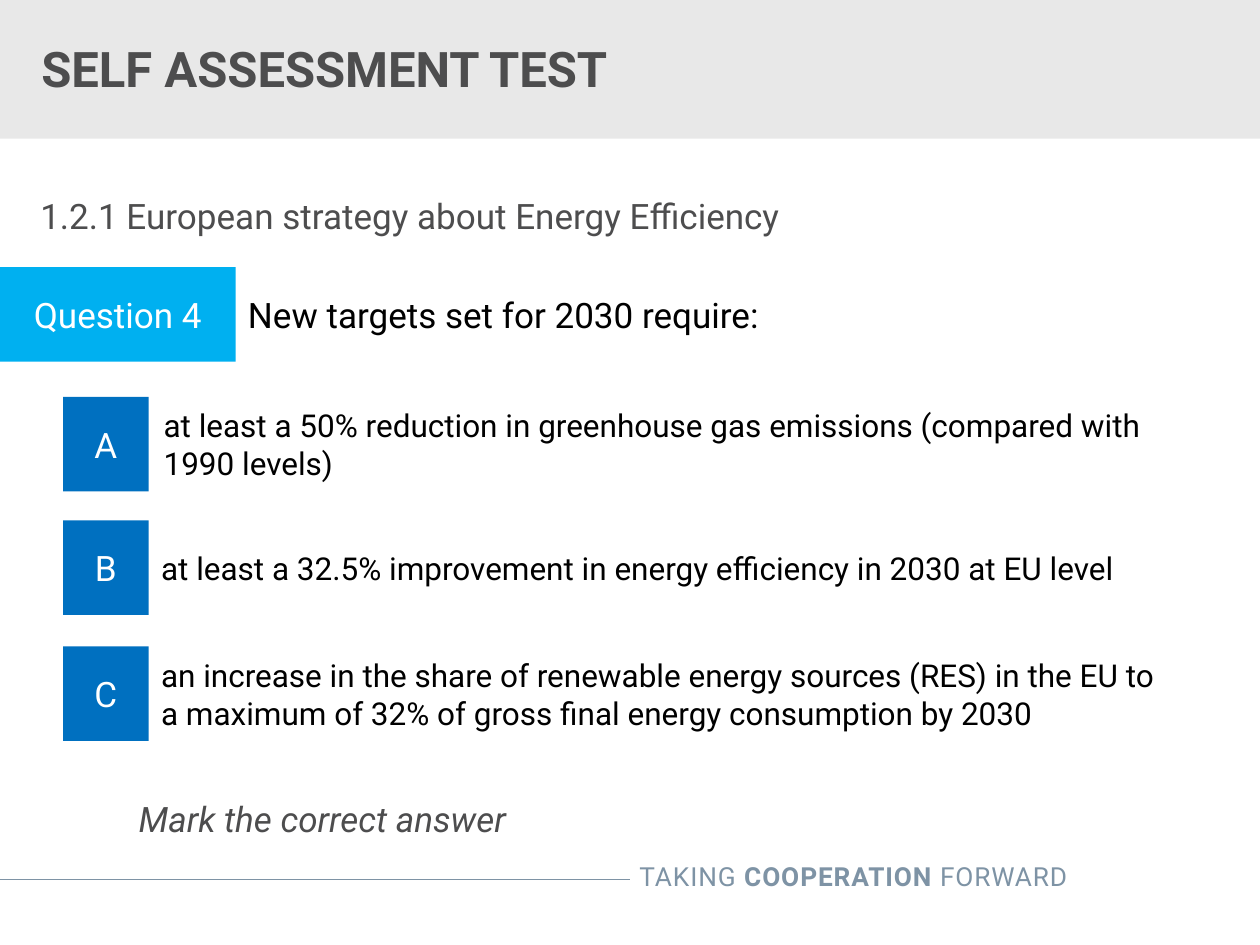
import pptx
import pptx.dml.color
import pptx.enum.shapes
import pptx.enum.text
import pptx.oxml.ns
import pptx.util
from lxml import etree

Inches = pptx.util.Inches
Pt = pptx.util.Pt
ALIGN = pptx.enum.text.PP_ALIGN
ANCHOR = pptx.enum.text.MSO_ANCHOR
FONT = "Roboto"
GREY = "4D4D4E"
SLATE = "7E93A5"
ROW_H = 0.75


def color(value):
    return pptx.dml.color.RGBColor.from_string(value)


def style(p, size, hue, bold=False, italic=False, align=ALIGN.LEFT):
    p.alignment = align
    p.font.name = FONT
    p.font.size = Pt(size)
    p.font.bold = bold
    p.font.italic = italic
    p.font.color.rgb = color(hue)


def add_text(s, box, text, size, hue, anchor=ANCHOR.MIDDLE, inset=0.1, **kw):
    tf = s.shapes.add_textbox(*map(Inches, box)).text_frame
    tf.word_wrap = True
    tf.vertical_anchor = anchor
    tf.margin_left = tf.margin_right = Inches(inset)
    tf.margin_top = tf.margin_bottom = Inches(inset / 2)
    p = tf.paragraphs[0]
    p.text = text
    style(p, size, hue, **kw)
    return p


def add_block(s, box, fill, text=""):
    sp = s.shapes.add_shape(pptx.enum.shapes.MSO_SHAPE.RECTANGLE, *map(Inches, box))
    sp.shadow.inherit = False
    sp.fill.solid()
    sp.fill.fore_color.rgb = color(fill)
    sp.line.fill.background()
    if text:
        tf = sp.text_frame
        tf.vertical_anchor = ANCHOR.MIDDLE
        p = tf.paragraphs[0]
        p.text = text
        style(p, 20, "FFFFFF", align=ALIGN.CENTER)


def add_header(s, x, y, w, h):
    add_block(s, (x, y, w, h), "E8E8E8")
    add_text(s, (x + 0.23, y + 0.16, 6.97, 0.75), "SELF ASSESSMENT TEST", 28, GREY, bold=True)


def add_footer(s, x, y, w, h):
    line_y = Inches(y + 0.2)
    line = s.shapes.add_connector(
        pptx.enum.shapes.MSO_CONNECTOR.STRAIGHT, Inches(x), line_y, Inches(5), line_y)
    line.line.color.rgb = color(SLATE)
    line.line.width = Pt(0.75)
    etree.SubElement(line._element.spPr, pptx.oxml.ns.qn("a:effectLst"))
    p = add_text(s, (3.88, y, x + w - 3.88, h), "", 15, SLATE,
                 anchor=ANCHOR.TOP, align=ALIGN.RIGHT)
    for text, bold in (("TAKING ", False), ("COOPERATION", True), (" FORWARD", False)):
        r = p.add_run()
        r.text = text
        r.font.bold = bold
        r._r.get_or_add_rPr().set("spc", "50")


def add_question(s, x, y, w, h, label, text):
    label_w = 1.87
    add_block(s, (x, y, label_w, h), "00B0F0", label)
    add_text(s, (x + label_w, y, w - label_w, h), text, 20, "000000")


def add_answer(s, x, y, w, h, letter, text, gap):
    letter_w = 0.68
    add_block(s, (x, y, letter_w, h), "0070C0", letter)
    add_text(s, (x + letter_w + gap, y, w - letter_w, h), text, 18, "000000")


def main():
    prs = pptx.Presentation()
    prs.slide_width, prs.slide_height = Inches(10), Inches(7.5)
    s = prs.slides.add_slide(prs.slide_layouts[6])
    add_footer(s, 0, 6.78, 8.57, 0.35)
    add_header(s, 0, 0, 10, 1.1)
    add_text(s, (0.32, 1.54, 9.36, 0.34), "1.2.1 European strategy about Energy Efficiency",
             20, GREY, anchor=ANCHOR.TOP, inset=0)
    add_question(s, 0, 2.12, 10, ROW_H, "Question 4", "New targets set for 2030 require:")
    answers = [
        ("A", 3.15, 0.02, "at least a 50% reduction in greenhouse gas emissions "
                          "(compared with 1990 levels)"),
        ("B", 4.13, 0, "at least a 32.5% improvement in energy efficiency in 2030 at EU level"),
        ("C", 5.13, 0, "an increase in the share of renewable energy sources (RES) in the EU "
                       "to a maximum of 32% of gross final energy consumption by 2030"),
    ]
    for letter, y, gap, text in answers:
        add_answer(s, 0.5, y, 8.83, ROW_H, letter, text, gap)
    add_text(s, (1.1, 6.33, 8.58, 0.34), "Mark the correct answer", 20, GREY,
             anchor=ANCHOR.TOP, inset=0, italic=True)
    prs.save("out.pptx")


if __name__ == "__main__":
    main()
